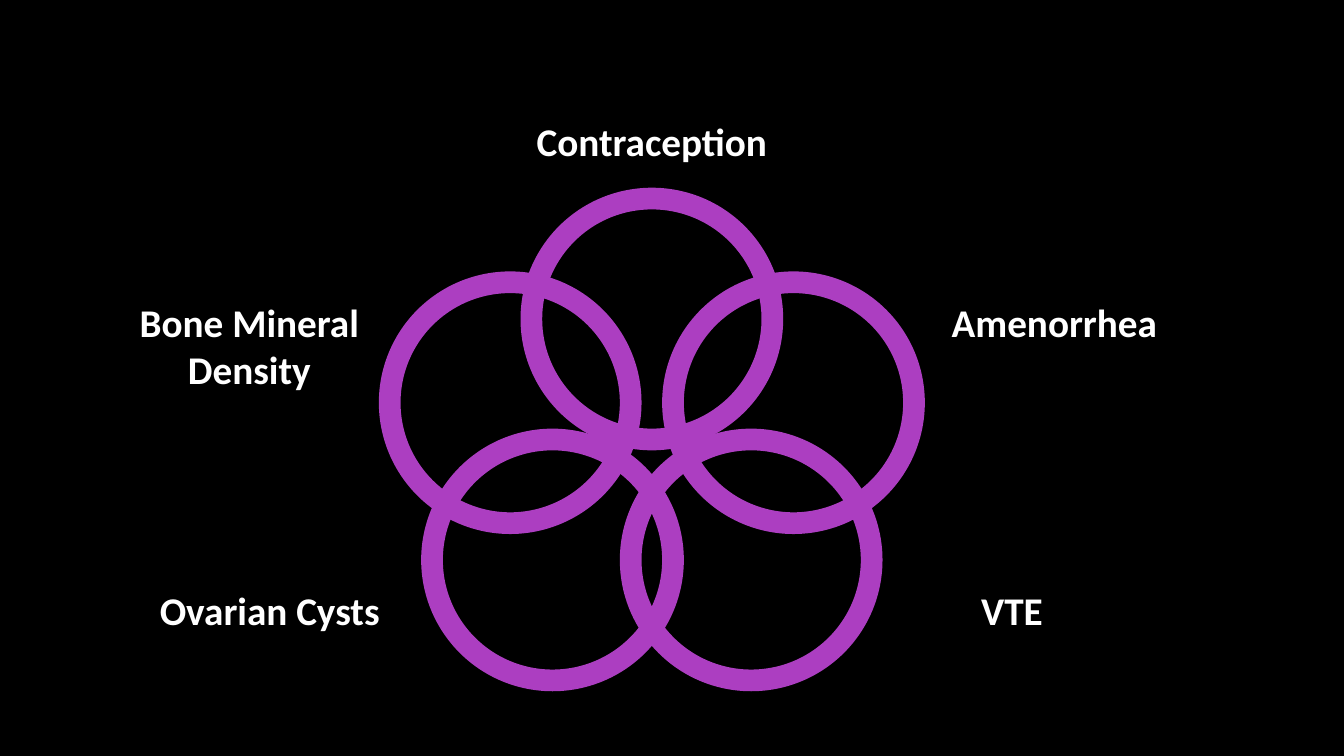
from pptx import Presentation, util as u
from pptx.dml.color import RGBColor
from pptx.enum import shapes, text

SLIDE_WIDTH, SLIDE_HEIGHT = u.Inches(13.33), u.Inches(7.5)
BLACK, WHITE, PURPLE = "000000", "FFFFFF", "AC3EC1"
AXIS = 48.5
RING_DIAMETER = 31.87
LABEL_WIDTH = 21
LINE_HEIGHT = 6.25

EFFECTS = [
    ("Contraception", (0, 42.2), (0, 14.93), 1),
    ("Amenorrhea", (10.54, 53.27), (29.95, 38.8), 1),
    ("VTE", (7.39, 74.07), (26.8, 76.93), 1),
    ("Ovarian Cysts", (-7.39, 74.07), (-28.43, 76.93), 1),
    ("Bone Mineral Density", (-10.54, 53.27), (-29.95, 38.8), 2),
]


def color(value):
    return RGBColor.from_string(value)


def across(percent):
    return round(SLIDE_WIDTH * percent / 100)


def down(percent):
    return round(SLIDE_HEIGHT * percent / 100)


def add_ring(slide, offset, middle):
    size = down(RING_DIAMETER)
    ring = slide.shapes.add_shape(
        shapes.MSO_SHAPE.OVAL,
        across(AXIS + offset) - size // 2,
        down(middle) - size // 2,
        size,
        size,
    )
    ring.shadow.inherit = False
    ring.fill.background()
    ring.line.color.rgb = color(PURPLE)
    ring.line.width = u.Pt(15.5)


def add_label(slide, wording, offset, top, lines):
    label = slide.shapes.add_textbox(
        across(AXIS + offset - LABEL_WIDTH / 2),
        down(top),
        across(LABEL_WIDTH),
        down(LINE_HEIGHT * lines + 1.35),
    )
    frame = label.text_frame
    frame.word_wrap = True
    frame.auto_size = text.MSO_AUTO_SIZE.SHAPE_TO_FIT_TEXT
    frame.text = wording
    paragraph = frame.paragraphs[0]
    paragraph.alignment = text.PP_ALIGN.CENTER
    font = paragraph.runs[0].font
    font.name = "Calibri"
    font.size = u.Pt(28)
    font.bold = True
    font.color.rgb = color(WHITE)


def main():
    deck = Presentation()
    deck.slide_width, deck.slide_height = SLIDE_WIDTH, SLIDE_HEIGHT
    slide = deck.slides.add_slide(deck.slide_layouts[6])
    slide.background.fill.solid()
    slide.background.fill.fore_color.rgb = color(BLACK)
    for _, ring_center, _, _ in EFFECTS:
        add_ring(slide, *ring_center)
    for wording, _, label_place, lines in EFFECTS:
        add_label(slide, wording, *label_place, lines)
    deck.save("out.pptx")


if __name__ == "__main__":
    main()
